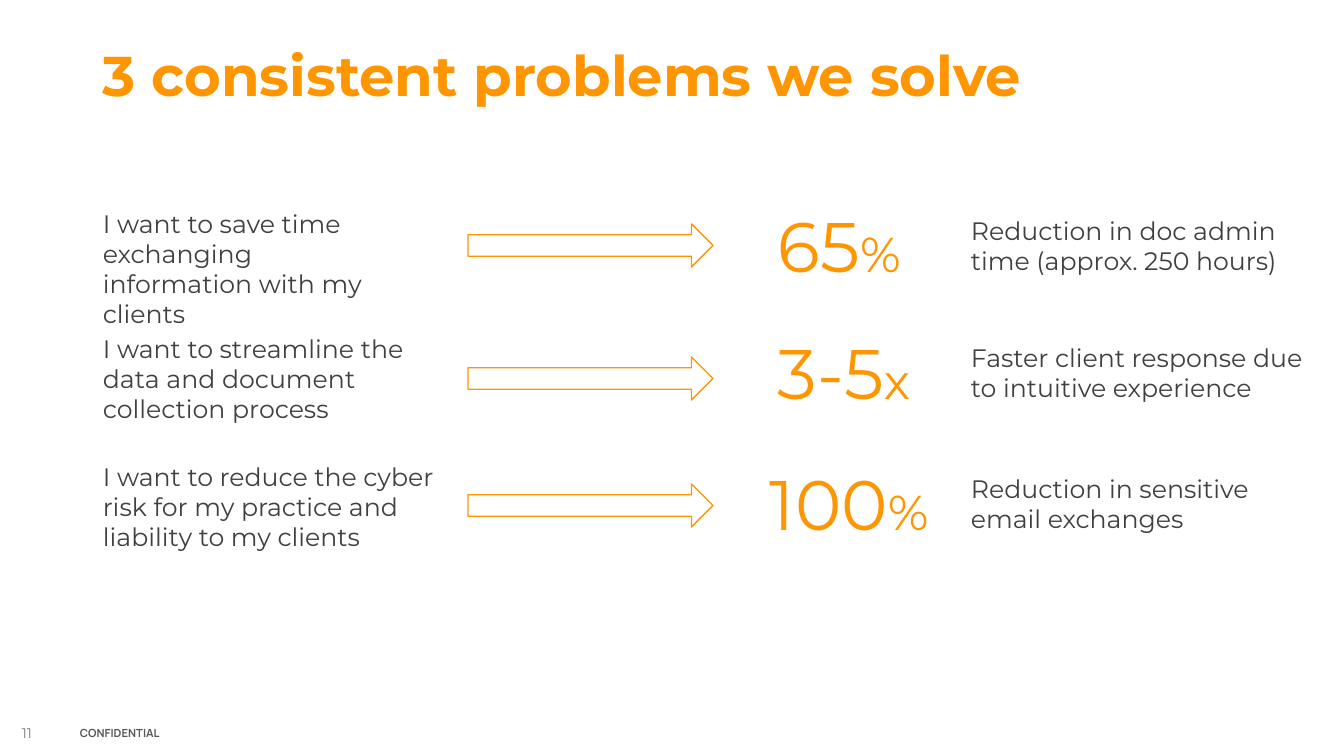
from pptx import Presentation
from pptx.dml.color import RGBColor
from pptx.enum.shapes import MSO_SHAPE
from pptx.enum.text import MSO_ANCHOR
from pptx.util import Emu, Pt

ORANGE = RGBColor(0xFF, 0x95, 0x00)
CHARCOAL = RGBColor(0x40, 0x40, 0x40)
DARK_GREY = RGBColor(0x59, 0x59, 0x59)
MID_GREY = RGBColor(0x7F, 0x7F, 0x7F)
WHITE = RGBColor(0xFF, 0xFF, 0xFF)

TITLE = "3 consistent problems we solve"
PAGE_NUMBER = "11"
FOOTER = "CONFIDENTIAL"

# Each part: its words, then the px values that vary from row to row.
ROWS = [
    {
        "problem": ("I want to save time exchanging information with my clients", 203, 320),
        "arrow_top": 224,
        "figure": ("65", "%", 768, 198),
        "outcome": ("Reduction in doc admin time (approx. 250 hours)", 330),
    },
    {
        "problem": ("I want to streamline the data and document collection process", 328, 359),
        "arrow_top": 357,
        "figure": ("3-5", "x", 768, 325),
        "outcome": ("Faster client response due to intuitive experience", 359),
    },
    {
        "problem": ("I want to reduce the cyber risk for my practice and liability to my clients", 456, 359),
        "arrow_top": 484,
        "figure": ("100", "%", 760, 456),
        "outcome": ("Reduction in sensitive email exchanges", 309),
    },
]

SLIDE_WIDTH, SLIDE_HEIGHT = 1344, 756
PX_PER_INCH = 100.8
PROBLEM_LEFT, ARROW_LEFT, OUTCOME_LEFT = 93, 468, 961
OUTCOME_DROP = 12


def px(length):
    return Emu(round(length * 914400 / PX_PER_INCH))


def add_text(page, area, runs, color, font="Montserrat", bold=False):
    """Add a wrapping box of one paragraph; runs are (words, points) pairs."""
    box = page.shapes.add_textbox(*map(px, area))
    frame = box.text_frame
    frame.word_wrap = True
    para = frame.paragraphs[0]
    for words, points in runs:
        span = para.add_run()
        span.text = words
        span.font.name = font
        span.font.size = Pt(points)
        span.font.bold = bold
        span.font.color.rgb = color
    return frame


def add_arrow(page, top):
    arrow = page.shapes.add_shape(
        MSO_SHAPE.RIGHT_ARROW, px(ARROW_LEFT), px(top), px(245), px(43))
    arrow.shadow.inherit = False
    arrow.fill.solid()
    arrow.fill.fore_color.rgb = WHITE
    arrow.line.color.rgb = ORANGE
    arrow.line.width = Pt(1)


def add_row(page, row):
    problem, problem_top, problem_width = row["problem"]
    number, unit, figure_left, figure_top = row["figure"]
    outcome, outcome_width = row["outcome"]
    add_text(page, (PROBLEM_LEFT, problem_top, problem_width, 102),
             [(problem, 18)], CHARCOAL)
    add_arrow(page, row["arrow_top"])
    add_text(page, (figure_left, figure_top, 274, 95),
             [(number, 50), (unit, 35)], ORANGE)
    add_text(page, (OUTCOME_LEFT, figure_top + OUTCOME_DROP, outcome_width, 71),
             [(outcome, 18)], CHARCOAL)


def add_footer(page):
    number = add_text(page, (22, 724, 43, 17), [(PAGE_NUMBER, 10)], MID_GREY)
    number.margin_left = number.margin_right = 0
    number.margin_top = number.margin_bottom = 0
    label = add_text(page, (70, 721, 102, 24), [(FOOTER, 8)], DARK_GREY,
                     font="Manrope", bold=True)
    for frame in (number, label):
        frame.vertical_anchor = MSO_ANCHOR.MIDDLE


def main():
    deck = Presentation()
    deck.slide_width, deck.slide_height = px(SLIDE_WIDTH), px(SLIDE_HEIGHT)
    page = deck.slides.add_slide(deck.slide_layouts[6])
    add_footer(page)
    title = add_text(page, (PROBLEM_LEFT, 43, 1177, 83), [(TITLE, 40)], ORANGE, bold=True)
    title.paragraphs[0].line_spacing = 0.9
    for row in ROWS:
        add_row(page, row)
    deck.save("out.pptx")


if __name__ == "__main__":
    main()
